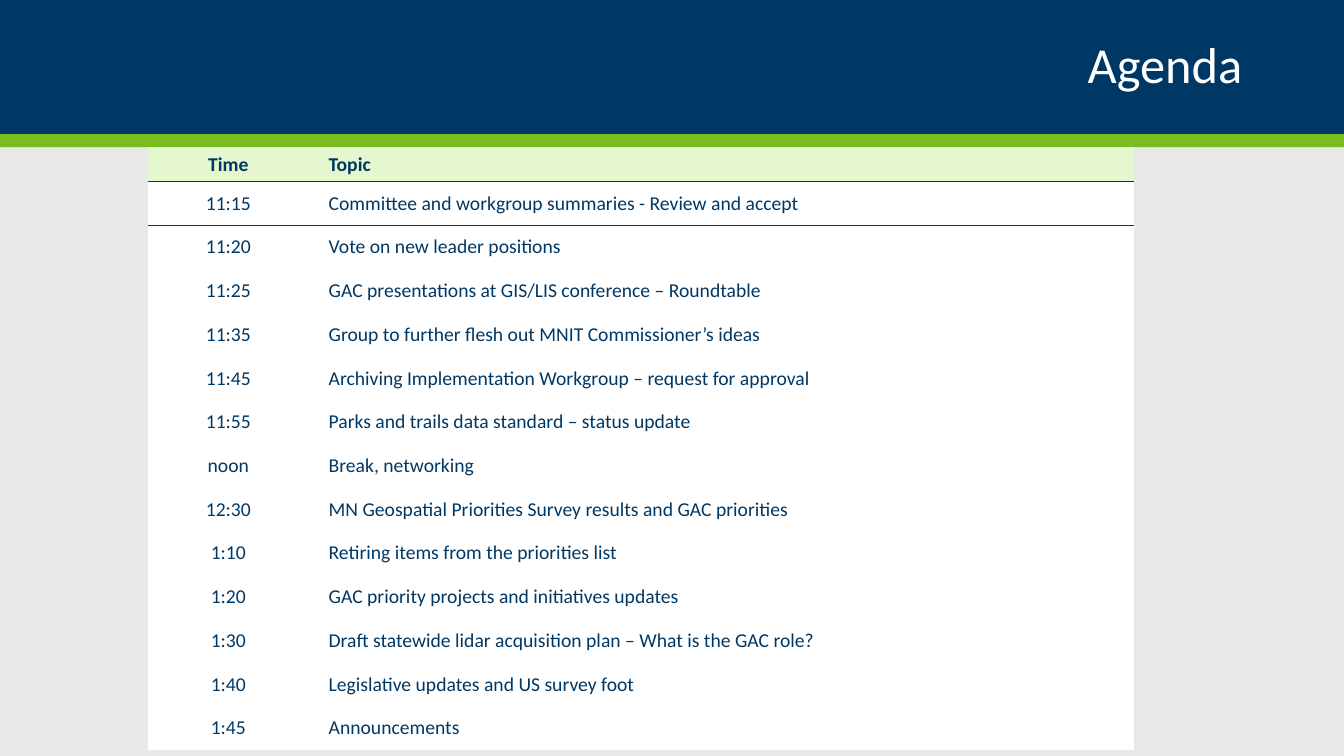
from lxml.etree import SubElement
from pptx import Presentation
from pptx.dml.color import RGBColor
from pptx.enum.shapes import MSO_SHAPE
from pptx.enum.text import MSO_ANCHOR, PP_ALIGN
from pptx.oxml import parse_xml
from pptx.oxml.ns import nsdecls, qn
from pptx.util import Inches, Pt

COLORS = {
    "navy": "003865",
    "green": "78BE21",
    "pale_green": "E4F7CE",
    "gray": "E8E8E8",
    "white": "FFFFFF",
}
FONT = "Calibri"
PLAIN_TABLE_STYLE = "{2D5ABB26-0587-4C30-8999-92F81FD0307C}"
SLIDE_WIDTH, SLIDE_HEIGHT = 13.33, 7.5
BANNER_HEIGHT, STRIPE_HEIGHT = 1.33, 0.13
COLUMN_WIDTHS = (1.59, 8.19)
HEADER_HEIGHT, ROW_HEIGHT = 0.34, 0.43

AGENDA = [
    ("Time", "Topic"),
    ("11:15", "Committee and workgroup summaries - Review and accept"),
    ("11:20", "Vote on new leader positions"),
    ("11:25", "GAC presentations at GIS/LIS conference – Roundtable"),
    ("11:35", "Group to further flesh out MNIT Commissioner’s ideas"),
    ("11:45", "Archiving Implementation Workgroup – request for approval"),
    ("11:55", "Parks and trails data standard – status update"),
    ("noon", "Break, networking"),
    ("12:30", "MN Geospatial Priorities Survey results and GAC priorities"),
    ("1:10", "Retiring items from the priorities list"),
    ("1:20", "GAC priority projects and initiatives updates"),
    ("1:30", "Draft statewide lidar acquisition plan – What is the GAC role?"),
    ("1:40", "Legislative updates and US survey foot"),
    ("1:45", "Announcements"),
]


def color(name):
    return RGBColor.from_string(COLORS[name])


def set_attributes(target, values):
    for name, value in values.items():
        setattr(target, name, value)


def write_text(frame, text, align, size, color_name, bold=False):
    paragraph = frame.paragraphs[0]
    paragraph.alignment = align
    run = paragraph.add_run()
    run.text = text
    set_attributes(run.font, {"name": FONT, "size": Pt(size), "bold": bold})
    run.font.color.rgb = color(color_name)
    return paragraph


def add_band(slide, left, top, width, height, color_name):
    band = slide.shapes.add_shape(
        MSO_SHAPE.RECTANGLE, Inches(left), Inches(top), Inches(width), Inches(height))
    band.shadow.inherit = False
    band.fill.solid()
    band.fill.fore_color.rgb = color(color_name)
    band.line.fill.background()


def add_banner(slide, left, top, width, height):
    """Draw the navy banner with its green stripe below and the title inside."""
    add_band(slide, left, top, width, height, "navy")
    add_band(slide, left, top + height, width, STRIPE_HEIGHT, "green")
    title = slide.shapes.add_textbox(
        Inches(left + 0.92), Inches(top + 0.17), Inches(width - 1.83), Inches(1))
    set_attributes(title.text_frame, {
        "word_wrap": True, "vertical_anchor": MSO_ANCHOR.MIDDLE})
    heading = write_text(title.text_frame, "Agenda", PP_ALIGN.RIGHT, 36, "white")
    heading.line_spacing = 0.9


def add_rule(cell, edge):
    """Draw a navy border on one edge: lnT for the top, lnB for the bottom."""
    border = parse_xml(f'<a:{edge} {nsdecls("a")} w="{Pt(1)}"/>')
    fill = SubElement(border, qn("a:solidFill"))
    SubElement(fill, qn("a:srgbClr"), val=COLORS["navy"])
    cell._tc.get_or_add_tcPr().insert(0, border)


def fill_cell(cell, text, is_header, is_time):
    padding = Inches(0.05 if is_header else 0.1)
    set_attributes(cell, {
        "margin_left": Inches(0.1 if is_time else 0.2),
        "margin_right": Inches(0.1),
        "margin_top": padding,
        "margin_bottom": padding,
        "vertical_anchor": MSO_ANCHOR.MIDDLE,
    })
    cell.fill.solid()
    cell.fill.fore_color.rgb = color("pale_green" if is_header else "white")
    align = PP_ALIGN.CENTER if is_time else PP_ALIGN.LEFT
    write_text(cell.text_frame, text, align, 14, "navy", is_header)


def add_agenda(slide, left, top):
    height = HEADER_HEIGHT + ROW_HEIGHT * (len(AGENDA) - 1)
    frame = slide.shapes.add_table(
        len(AGENDA), len(COLUMN_WIDTHS), Inches(left), Inches(top),
        Inches(sum(COLUMN_WIDTHS)), Inches(height))
    table = frame.table
    table.horz_banding = False
    table._tbl.tblPr.find(qn("a:tableStyleId")).text = PLAIN_TABLE_STYLE
    for column, width in zip(table.columns, COLUMN_WIDTHS):
        column.width = Inches(width)
    for row_index, (row, entry) in enumerate(zip(table.rows, AGENDA)):
        row.height = Inches(ROW_HEIGHT if row_index else HEADER_HEIGHT)
        for column_index, (cell, text) in enumerate(zip(row.cells, entry)):
            fill_cell(cell, text, row_index == 0, column_index == 0)
            if row_index < 2:
                add_rule(cell, ("lnB", "lnT")[row_index])


def main():
    deck = Presentation()
    set_attributes(deck, {
        "slide_width": Inches(SLIDE_WIDTH), "slide_height": Inches(SLIDE_HEIGHT)})
    slide = deck.slides.add_slide(deck.slide_layouts[6])
    slide.background.fill.solid()
    slide.background.fill.fore_color.rgb = color("gray")
    add_banner(slide, 0, 0, SLIDE_WIDTH, BANNER_HEIGHT)
    add_agenda(slide, 1.47, BANNER_HEIGHT + STRIPE_HEIGHT)
    deck.save("out.pptx")


if __name__ == "__main__":
    main()
